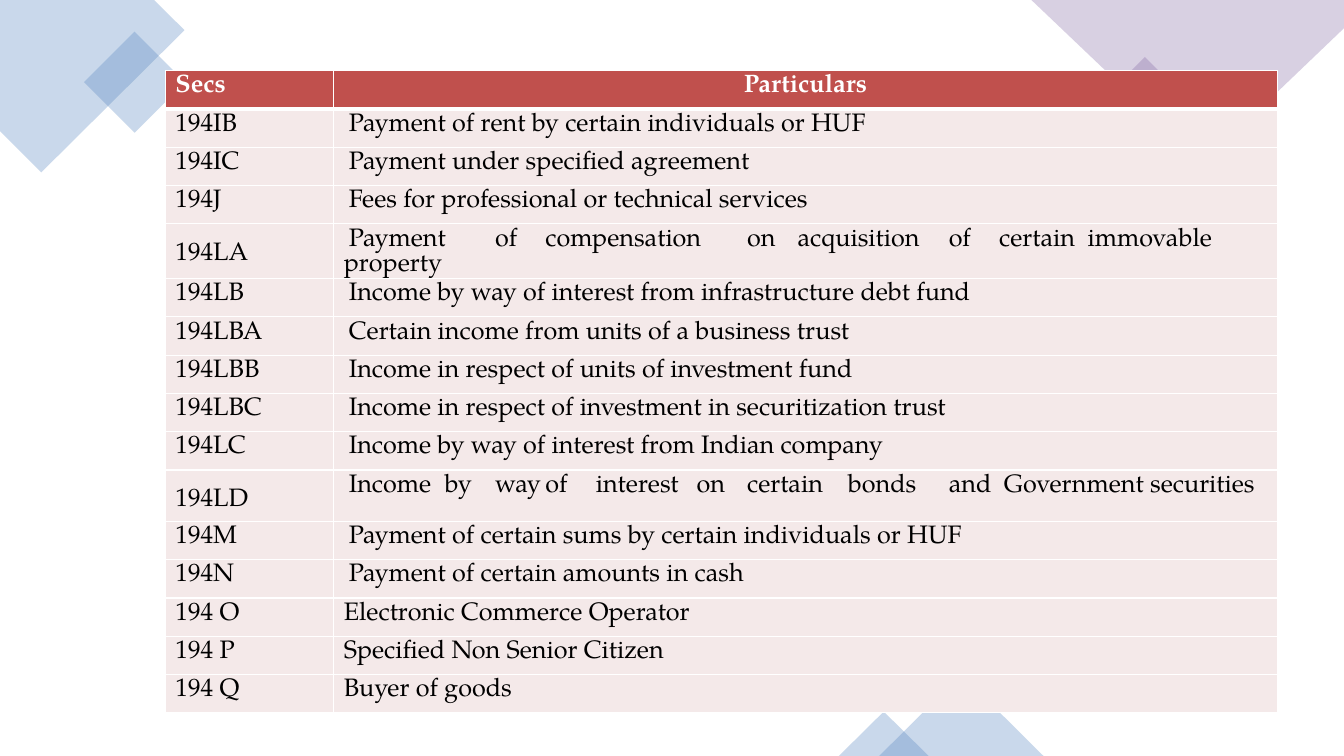
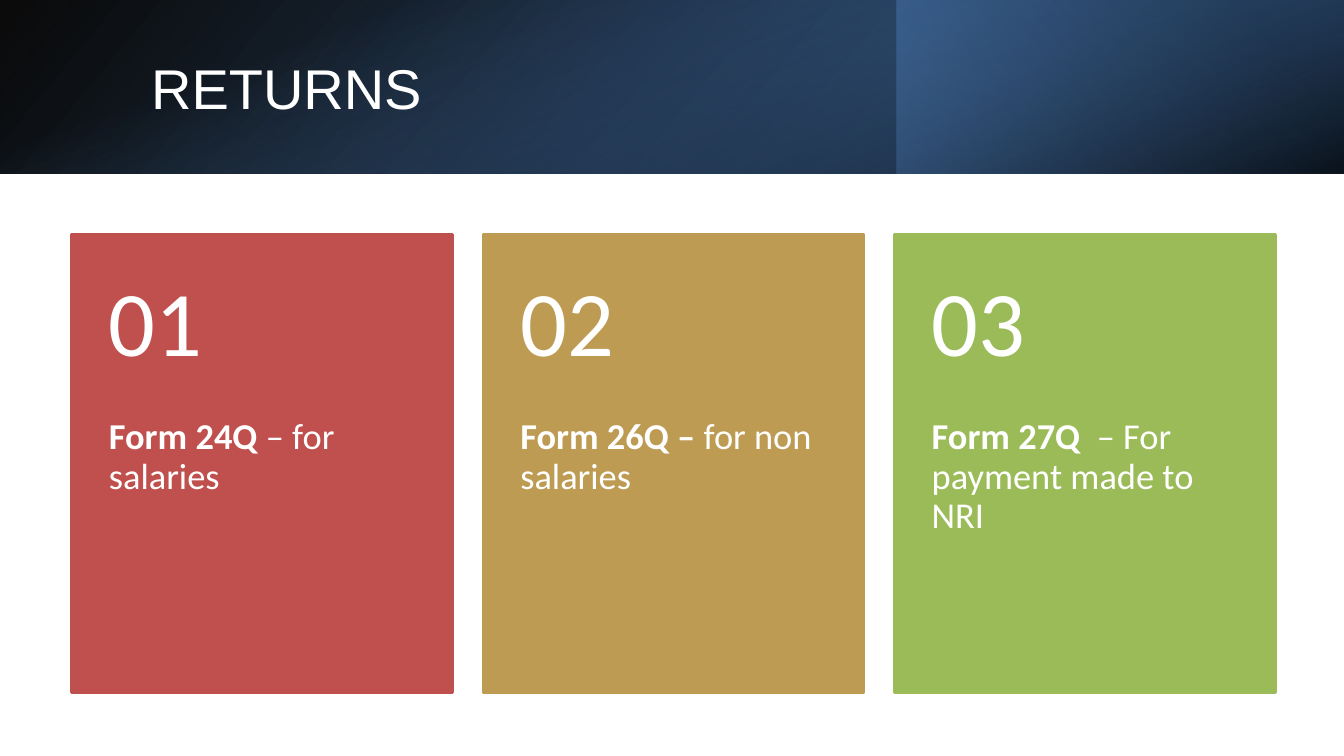
"""Build a table of tax sections and a slide of return forms."""
import pptx
import pptx.util
import pptx.dml.color
import pptx.enum.shapes
import pptx.enum.text
import pptx.oxml
import pptx.oxml.ns
from lxml import etree

Inches = pptx.util.Inches
Pt = pptx.util.Pt
SHAPE = pptx.enum.shapes.MSO_SHAPE
ALIGN = pptx.enum.text.PP_ALIGN
ANCHOR = pptx.enum.text.MSO_ANCHOR
NS = pptx.oxml.ns.nsdecls("a")

WHITE, BLACK = "FFFFFF", "000000"
RED, GOLD, GREEN = "C0504D", "BD9B53", "9BBB59"
BLUE, PURPLE, PINK = "4F81BD", "8064A2", "F4E9E9"
SERIF, SANS, HEAD = "TeX Gyre Pagella", "Calibri", "Arial"
WIDE, TALL, BAND = 13.33, 7.5, 1.72

ROWS = [
    ("194IB", "Payment of rent by certain individuals or HUF"),
    ("194IC", "Payment under specified agreement"),
    ("194J", "Fees for professional or technical services"),
    ("194LA", "Payment\tof\tcompensation\ton\tacquisition\tof\tcertain  immovable property"),
    ("194LB", "Income by way of interest from infrastructure debt fund"),
    ("194LBA", "Certain income from units of a business trust"),
    ("194LBB", "Income in respect of units of investment fund"),
    ("194LBC", "Income in respect of investment in securitization trust"),
    ("194LC", "Income by way of interest from Indian company"),
    ("194LD", "Income\tby\tway\tof\tinterest\ton\tcertain\tbonds\tand  Government securities"),
    ("194M", "Payment of certain sums by certain individuals or HUF"),
    ("194N", "Payment of certain amounts in cash"),
    ("194 O", "Electronic Commerce Operator"),
    ("194 P", "Specified Non Senior Citizen"),
    ("194 Q", "Buyer of goods"),
]
FLUSH = ("194 O", "194 P", "194 Q")

CARDS = [
    (RED, "01", "Form 24Q", " – for salaries"),
    (GOLD, "02", "Form 26Q –", " for non salaries"),
    (GREEN, "03", "Form 27Q ", " – For payment made to NRI"),
]


def rgb(code):
    return pptx.dml.color.RGBColor.from_string(code)


def paint(shape, code, clear=None):
    shape.shadow.inherit = False
    shape.fill.solid()
    shape.fill.fore_color.rgb = rgb(code)
    shape.line.fill.background()
    if clear is not None:
        tone = next(shape._element.spPr.iter(pptx.oxml.ns.qn("a:srgbClr")))
        etree.SubElement(tone, pptx.oxml.ns.qn("a:alpha"), val=str(clear * 1000))


def block(slide, kind, box, code, clear=None, turn=0):
    shape = slide.shapes.add_shape(kind, *map(Inches, box))
    shape.rotation = turn
    paint(shape, code, clear)
    return shape


def outline(slide, points, code, clear):
    spots = [(Inches(x), Inches(y)) for x, y in points]
    path = slide.shapes.build_freeform(*spots[0])
    path.add_line_segments(spots[1:], close=True)
    paint(path.convert_to_shape(), code, clear)


def fade(slide, box, stops, angle, turn=0, flip=False):
    shape = block(slide, SHAPE.RECTANGLE, box, BLACK, turn=turn)
    props = shape._element.spPr
    marks = "".join(
        f'<a:gs pos="{at * 1000}"><a:srgbClr val="{code}">'
        f'<a:alpha val="{clear * 1000}"/></a:srgbClr></a:gs>'
        for at, code, clear in stops)
    grad = pptx.oxml.parse_xml(
        f'<a:gradFill {NS} rotWithShape="1"><a:gsLst>{marks}</a:gsLst>'
        f'<a:lin ang="{angle * 60000}" scaled="0"/></a:gradFill>')
    props.replace(props.find(pptx.oxml.ns.qn("a:solidFill")), grad)
    if flip:
        props.xfrm.set("flipH", "1")


def style(font, name, size, code, bold=False):
    font.name, font.size, font.bold = name, Pt(size), bold
    font.color.rgb = rgb(code)


def pad(frame, left, top, right, bottom):
    frame.margin_left, frame.margin_top = Inches(left), Inches(top)
    frame.margin_right, frame.margin_bottom = Inches(right), Inches(bottom)


def label(slide, box, runs, name, size, pads=(0, 0, 0, 0), anchor=ANCHOR.TOP, gap=1):
    frame = slide.shapes.add_textbox(*map(Inches, box)).text_frame
    frame.word_wrap = True
    frame.vertical_anchor = anchor
    pad(frame, *pads)
    para = frame.paragraphs[0]
    para.line_spacing = gap
    style(para.font, name, size, WHITE)
    for text, bold in runs:
        run = para.add_run()
        run.text = text
        style(run.font, name, size, WHITE, bold)


def edge(cell, top, bottom):
    props = cell._tc.get_or_add_tcPr()
    widths = {"L": 1, "R": 1, "T": top, "B": bottom}
    for spot, (side, width) in enumerate(widths.items()):
        props.insert(spot, pptx.oxml.parse_xml(
            f'<a:ln{side} {NS} w="{Pt(width)}"><a:solidFill>'
            f'<a:srgbClr val="{WHITE}"/></a:solidFill></a:ln{side}>'))


def entry(cell, text, row, left, first=0, tall=False):
    head = row == 0
    pad(cell, 0, 0.18 if tall else 0.04, 0, 0)
    cell.fill.solid()
    cell.fill.fore_color.rgb = rgb(RED if head else PINK)
    edge(cell, 3 if row == 1 else 1, 3 if head else 1)
    para = cell.text_frame.paragraphs[0]
    run = para.add_run()
    run.text = text
    style(run.font, SERIF, 18, WHITE if head else BLACK, head)
    para.space_before = Pt(12.2 if tall else 2.5)
    props = para._p.get_or_add_pPr()
    props.set("marL", str(Inches(left)))
    props.set("indent", str(Inches(first)))
    return para


def grid(slide):
    frame = slide.shapes.add_table(
        len(ROWS) + 1, 2, *map(Inches, (1.64, 0.7, 11.03, 6.34)))
    table = frame.table
    table.horz_banding = False
    for col, width in zip(table.columns, (1.67, 9.36)):
        col.width = Inches(width)
    for row, (sec, text) in enumerate([("Secs", "Particulars")] + ROWS):
        tall = "\t" in text
        table.rows[row].height = Inches(0.51 if tall else 0.38)
        entry(table.cell(row, 0), sec, row, 0.1, tall=tall)
        left = 0 if row == 0 else 0.1 if tall or sec in FLUSH else 0.15
        para = entry(table.cell(row, 1), text, row, left, 0.05 if tall else 0)
        if row == 0:
            para.alignment = ALIGN.CENTER


def decor(slide):
    outline(slide, [(1.53, 0), (0, 0), (0, 1.3), (0.41, 1.71), (1.83, 0.3)], BLUE, 30)
    block(slide, SHAPE.RECTANGLE, (0.98, 0.46, 0.71, 0.71), BLUE, 30, 315)
    block(slide, SHAPE.RECTANGLE, (10.98, 0.72, 0.75, 0.75), PURPLE, 30, 315)
    outline(slide, [(WIDE, 0), (10.23, 0), (11.93, 1.62), (WIDE, 0.28)], PURPLE, 30)
    for left, width, height in ((8.72, 1.63, 0.81), (8.32, 0.89, 0.44)):
        box = (left, TALL - height, width, height)
        block(slide, SHAPE.ISOSCELES_TRIANGLE, box, BLUE, 30)


def banner(slide, title):
    fade(slide, (0, 0, WIDE, BAND),
         [(0, BLACK, 96), (100, "376092", 100)], 140, flip=True)
    fade(slide, (8.89, 0, 4.44, BAND),
         [(19, "254061", 68), (100, BLUE, 79)], 320, turn=180)
    shift = (WIDE - BAND) / 2
    fade(slide, (shift, -shift, BAND, WIDE),
         [(23, BLUE, 0), (99, BLACK, 74)], 340, turn=90)
    label(slide, (1.5, 0.38, 10.98, 0.96), [(title, False)], HEAD, 40,
          anchor=ANCHOR.MIDDLE)


def card(slide, left, code, mark, form, use):
    top, width, height, split = 2.33, 3.78, 4.54, 1.82
    shape = block(slide, SHAPE.RECTANGLE, (left, top, width, height), code)
    shape.line.color.rgb = rgb(code)
    shape.line.width = Pt(2)
    label(slide, (left, top + split, width, height - split),
          [(form, True), (use, False)], SANS, 26, (0.37, 0, 0.37, 0.36), gap=0.9)
    label(slide, (left, top, width, split), [(mark, False)], SANS, 66,
          (0.37, 0.18, 0.37, 0.18), ANCHOR.MIDDLE, 0.9)


def main():
    deck = pptx.Presentation()
    deck.slide_width, deck.slide_height = Inches(WIDE), Inches(TALL)
    blank = deck.slide_layouts[6]

    slide = deck.slides.add_slide(blank)
    decor(slide)
    grid(slide)

    slide = deck.slides.add_slide(blank)
    banner(slide, "RETURNS")
    for step, data in enumerate(CARDS):
        card(slide, 0.71 + 4.08 * step, *data)

    deck.save("out.pptx")


if __name__ == "__main__":
    main()
